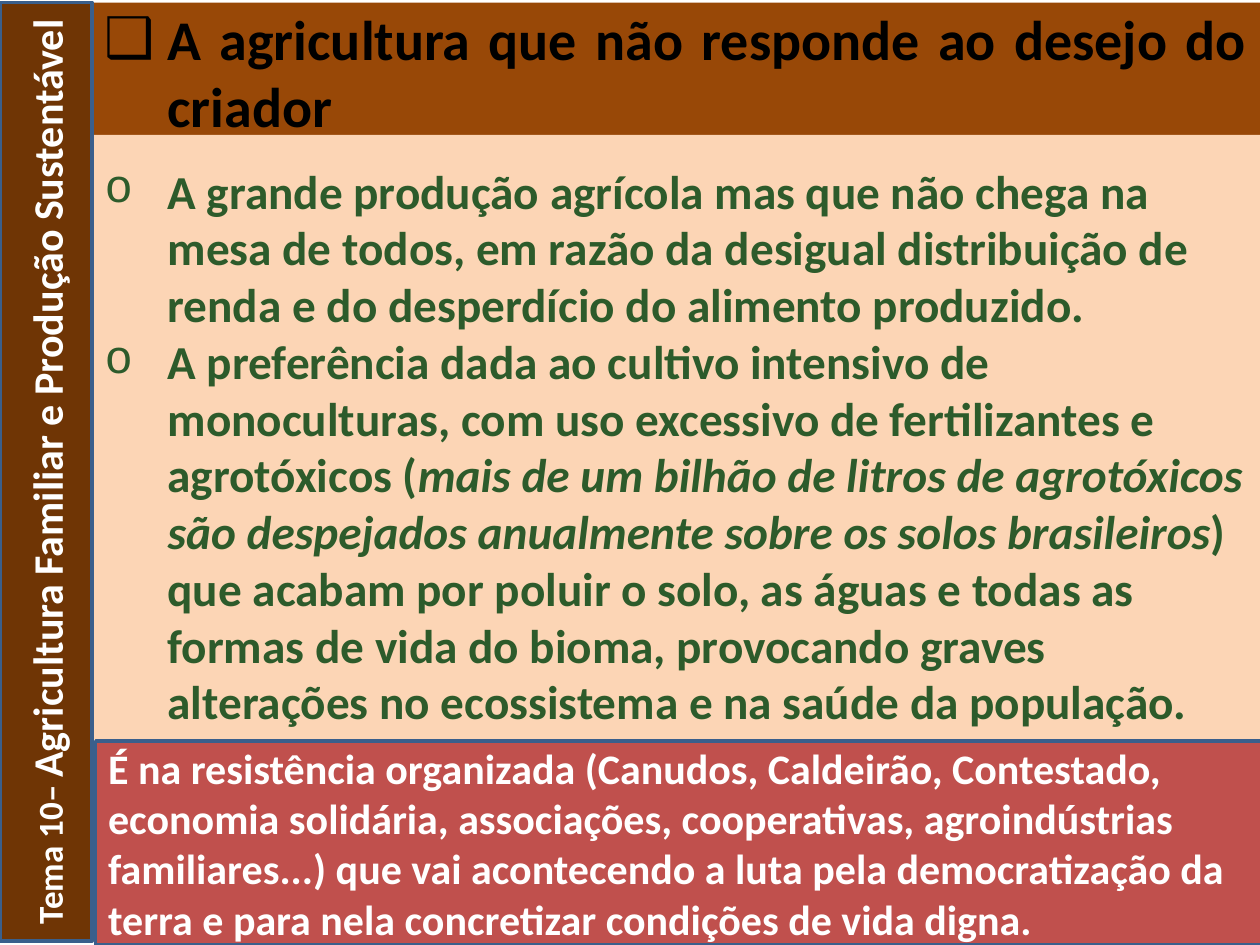
"""Build the slide on farming that does not answer the creator's wish."""
from dataclasses import dataclass
from typing import Optional

from lxml import etree
from pptx import Presentation
from pptx.dml.color import RGBColor
from pptx.enum import shapes, text
from pptx.oxml import ns
from pptx.util import Pt

FONT = "Calibri"
OUTLINE = "3A5F8C"


@dataclass
class Run:
    content: str
    size: float
    color: str
    italic: bool = False


@dataclass
class Bullet:
    character: str
    font: str


@dataclass
class Panel:
    left: float
    top: float
    width: float
    height: float
    fill: str
    paragraphs: list[list[Run]]
    outlined: bool = False
    bullet: Optional[Bullet] = None
    alignment: text.PP_ALIGN = text.PP_ALIGN.LEFT
    anchor: text.MSO_ANCHOR = text.MSO_ANCHOR.MIDDLE
    inset_top: float = 3.6
    space_after: float = 0
    direction: str = "horz"


def rgb(value: str) -> RGBColor:
    return RGBColor.from_string(value)


def add_bullet(paragraph, bullet: Optional[Bullet]) -> None:
    properties = paragraph._p.get_or_add_pPr()
    properties.set("marL", str(Pt(36) if bullet else 0))
    properties.set("indent", str(Pt(-36) if bullet else 0))
    if bullet:
        etree.SubElement(properties, ns.qn("a:buFont"), typeface=bullet.font)
        etree.SubElement(properties, ns.qn("a:buChar"), char=bullet.character)


def add_run(paragraph, item: Run) -> None:
    run = paragraph.add_run()
    run.text = item.content
    run.font.name = FONT
    run.font.size = Pt(item.size)
    run.font.bold = True
    run.font.italic = item.italic
    run.font.color.rgb = rgb(item.color)


def format_panel(shape, panel: Panel) -> None:
    shape.left, shape.top = Pt(panel.left), Pt(panel.top)
    shape.width, shape.height = Pt(panel.width), Pt(panel.height)
    shape.fill.solid()
    shape.fill.fore_color.rgb = rgb(panel.fill)
    if panel.outlined:
        shape.line.color.rgb = rgb(OUTLINE)
        shape.line.width = Pt(2)
    else:
        shape.line.fill.background()
    frame = shape.text_frame
    frame.word_wrap = True
    frame.auto_size = text.MSO_AUTO_SIZE.NONE
    frame.vertical_anchor = panel.anchor
    frame.margin_left = frame.margin_right = Pt(7.2)
    frame.margin_top, frame.margin_bottom = Pt(panel.inset_top), Pt(3.6)
    frame._txBody.bodyPr.set("vert", panel.direction)
    for index, runs in enumerate(panel.paragraphs):
        paragraph = frame.add_paragraph() if index else frame.paragraphs[0]
        paragraph.alignment = panel.alignment
        paragraph.line_spacing = 1.0
        paragraph.space_before = Pt(0)
        paragraph.space_after = Pt(panel.space_after)
        add_bullet(paragraph, panel.bullet)
        for item in runs:
            add_run(paragraph, item)


def add_panel(slide, panel: Panel) -> None:
    shape = slide.shapes.add_shape(shapes.MSO_SHAPE.RECTANGLE, 0, 0, 0, 0)
    shape.shadow.inherit = False
    format_panel(shape, panel)


GREEN, WHITE = "2D5B2B", "FFFFFF"
TITLE = Panel(
    52.56, 1.44, 667.44, 79.2, "984807",
    [[Run("A agricultura que não responde ao desejo do criador", 32, "000000")]],
    bullet=Bullet("❑", FONT), alignment=text.PP_ALIGN.JUSTIFY, space_after=6,
)
BODY = Panel(
    52.56, 77.04, 667.44, 345.6, "FCD5B5",
    [
        [Run("A grande produção agrícola mas que não chega na mesa de todos, em razão da "
             "desigual distribuição de renda e do desperdício do alimento produzido.", 27, GREEN)],
        [Run("A preferência dada ao cultivo intensivo de monoculturas, com uso excessivo de "
             "fertilizantes e agrotóxicos (", 27, GREEN),
         Run("mais de um bilhão de litros de agrotóxicos são despejados anualmente sobre os "
             "solos brasileiros", 27, GREEN, italic=True),
         Run(") que acabam por poluir o solo, as águas e todas as formas de vida do bioma, "
             "provocando graves alterações no ecossistema e na saúde da população.", 27, GREEN)],
    ],
    bullet=Bullet("o", "Courier New"), anchor=text.MSO_ANCHOR.TOP, inset_top=15.5,
)
SIDEBAR = Panel(
    0, 1.44, 52.56, 536.4, "6F3505",
    [[Run("Tema 10– ", 20, WHITE),
      Run("Agricultura Familiar e Produção Sustentável", 24, WHITE)]],
    outlined=True, alignment=text.PP_ALIGN.CENTER, direction="vert270",
)
CONCLUSION = Panel(
    54.72, 423.36, 667.44, 116.64, "C0504D",
    [[Run("É na resistência organizada (Canudos, Caldeirão, Contestado, economia solidária, "
          "associações, cooperativas, agroindústrias familiares...) que vai acontecendo a luta "
          "pela democratização da terra e para nela concretizar condições de vida digna.",
          24, WHITE)]],
    outlined=True,
)


def main() -> None:
    presentation = Presentation()
    presentation.slide_width, presentation.slide_height = Pt(720), Pt(540)
    slide = presentation.slides.add_slide(presentation.slide_layouts[1])
    format_panel(slide.shapes.title, TITLE)
    format_panel(slide.placeholders[1], BODY)
    for panel in (SIDEBAR, CONCLUSION):
        add_panel(slide, panel)
    presentation.save("out.pptx")


if __name__ == "__main__":
    main()
